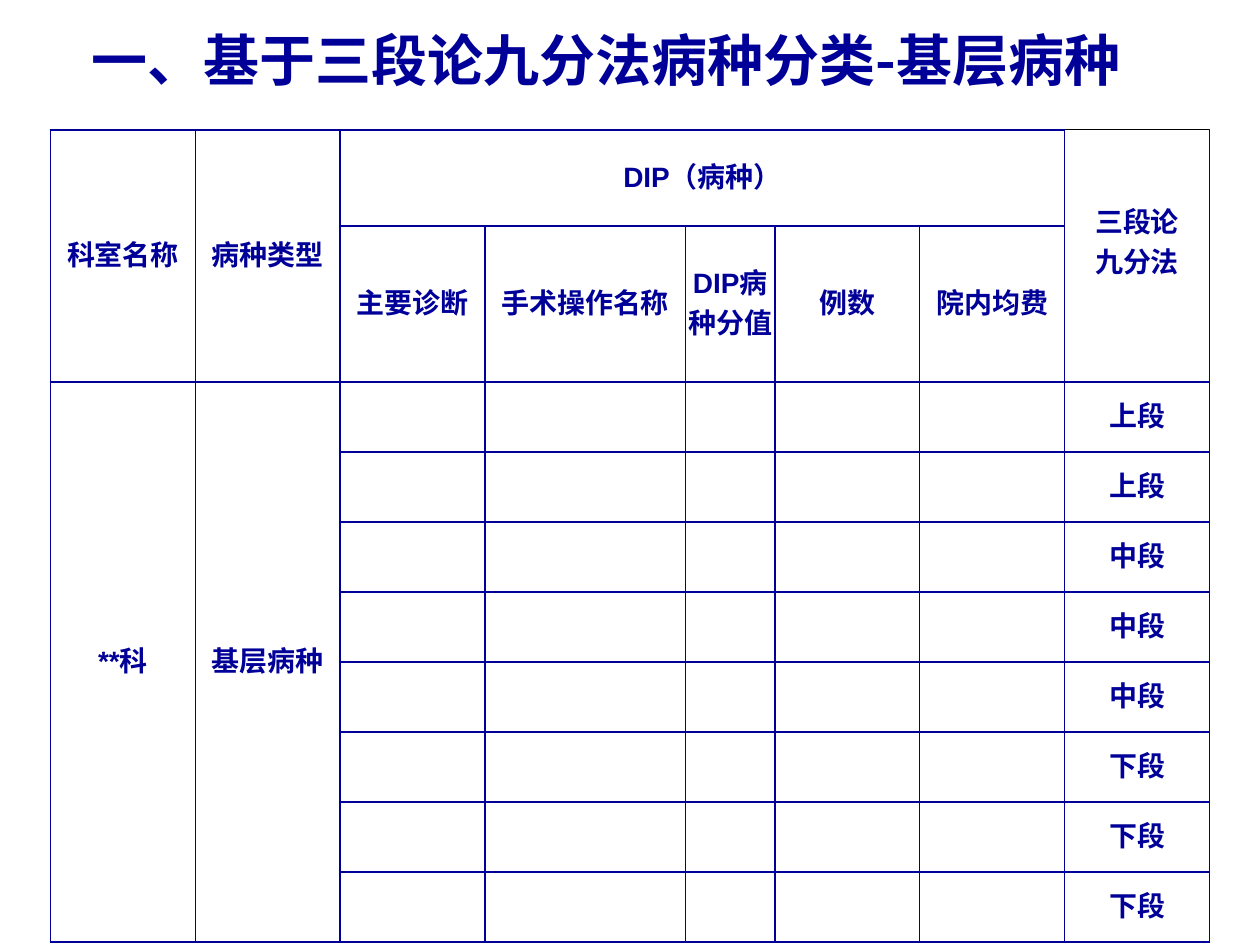
from lxml import etree
from pptx import Presentation
from pptx.dml.color import RGBColor
from pptx.enum.text import MSO_ANCHOR, PP_ALIGN
from pptx.oxml.ns import qn
from pptx.util import Pt

NAVY = RGBColor(0x00, 0x00, 0x99)
BLACK = RGBColor(0x00, 0x00, 0x00)
MIDDLE = MSO_ANCHOR.MIDDLE
TOP = MSO_ANCHOR.TOP
CENTER = PP_ALIGN.CENTER
CJK = "Noto Sans CJK SC"


def write(frame, text, size, face):
    frame.text = text
    for para in frame.paragraphs:
        para.alignment = CENTER
        for run in para.runs:
            font = run.font
            for key, val in {"size": Pt(size), "name": face, "bold": True}.items():
                setattr(font, key, val)
            font.color.rgb = NAVY
            east = etree.SubElement(run._r.get_or_add_rPr(), qn("a:ea"))
            east.set("typeface", CJK)


def border(cell, pos, side, width, color):
    line = etree.Element(qn("a:ln" + side), w=str(Pt(width)))
    fill = etree.SubElement(line, qn("a:solidFill"))
    etree.SubElement(fill, qn("a:srgbClr"), val=str(color))
    cell._tc.get_or_add_tcPr().insert(pos, line)


deck = Presentation()
deck.slide_width, deck.slide_height = Pt(720), Pt(540)
slide = deck.slides.add_slide(deck.slide_layouts[6])

title = slide.shapes.add_textbox(Pt(15.8), Pt(-3.6), Pt(661), Pt(78.5)).text_frame
title.word_wrap = True
title.vertical_anchor = MIDDLE
write(title, "一、基于三段论九分法病种分类-基层病种", 32, CJK)
title.paragraphs[0].line_spacing = Pt(35)

widths = [82.8] * 3 + [114.5, 51.1] + [82.8] * 3
heights = [55, 89] + [40] * 8
frame = slide.shapes.add_table(
    len(heights), len(widths), Pt(28.8), Pt(74.2), Pt(sum(widths)), Pt(sum(heights))
)
table = frame.table
table.first_row = False
table.horz_banding = False
for col, width in zip(table.columns, widths):
    col.width = Pt(width)
for row, height in zip(table.rows, heights):
    row.height = Pt(height)

look = {
    "vertical_anchor": MIDDLE,
    "margin_left": Pt(0.7),
    "margin_right": Pt(0.7),
    "margin_top": Pt(0.7),
    "margin_bottom": Pt(3.6),
}
for r in range(len(heights)):
    for c in range(len(widths)):
        cell = table.cell(r, c)
        for key, val in look.items():
            setattr(cell, key, val)
        for pos, side in enumerate("LRTB"):
            thin = (r, c, side) == (0, 7, "T")
            border(cell, pos, side, 0.5 if thin else 1, BLACK if thin else NAVY)
        cell.fill.background()

spans = [
    (0, 0, 1, 0), (0, 1, 1, 1), (0, 2, 0, 6),
    (0, 7, 1, 7), (2, 0, 9, 0), (2, 1, 9, 1),
]
for r, c, low, right in spans:
    table.cell(r, c).merge(table.cell(low, right))

words = {
    (0, 0): "科室名称",
    (0, 1): "病种类型",
    (0, 2): "DIP（病种）",
    (0, 7): "三段论\n九分法",
    (2, 0): "**科",
    (2, 1): "基层病种",
}
heads = ["主要诊断", "手术操作名称", "DIP病种分值", "例数", "院内均费"]
words.update({(1, c): head for c, head in enumerate(heads, 2)})
parts = ["上段"] * 2 + ["中段"] * 3 + ["下段"] * 3
words.update({(r, 7): part for r, part in enumerate(parts, 2)})
for (r, c), text in words.items():
    write(table.cell(r, c).text_frame, text, 16, "Arial")

method = table.cell(0, 7)
method.vertical_anchor = TOP
method.margin_top = Pt(40)

deck.save("out.pptx")
